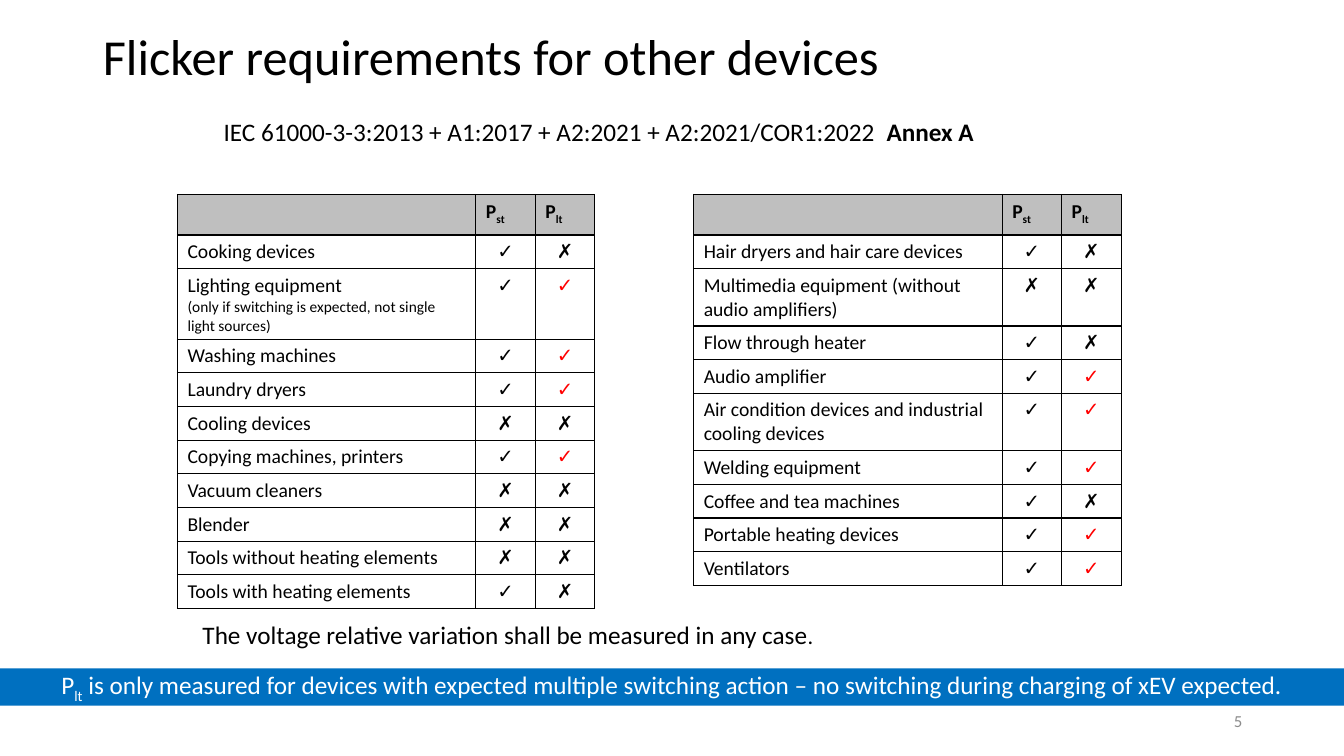
"""Build the slide on flicker requirements for other devices."""
from dataclasses import dataclass

from lxml import etree
from pptx import Presentation
from pptx import util as u
from pptx.dml import color as c
from pptx.enum import shapes, text
from pptx.oxml import ns


@dataclass(frozen=True)
class Theme:
    font: str = "Calibri"
    black: str = "000000"
    white: str = "FFFFFF"
    red: str = "FF0000"
    blue: str = "0070C0"
    head: str = "BFBFBF"
    gray: str = "8C8C8C"
    title: int = 36
    body: int = 18
    stop: int = 16
    cell: int = 14
    page: int = 12
    note: int = 11


look = Theme()


def put(para, words, size, hue=look.black, bold=False, sub=False):
    run = para.add_run()
    run.text = words
    font = run.font
    font.name, font.size, font.bold = look.font, u.Pt(size), bold
    font.color.rgb = c.RGBColor.from_string(hue)
    if sub:
        font._element.set("baseline", "-25000")


def frame(cell, base):
    props = cell._tc.get_or_add_tcPr()
    for side in "LRTB":
        width = base if side == "B" else 1
        line = etree.SubElement(props, ns.qn(f"a:ln{side}"), w=str(u.Pt(width)))
        fill = etree.SubElement(line, ns.qn("a:solidFill"))
        etree.SubElement(fill, ns.qn("a:srgbClr"), val=look.black)


deck = Presentation()
deck.slide_width, deck.slide_height = u.Inches(13.33), u.Inches(7.5)
slide = deck.slides.add_slide(deck.slide_layouts[5])

title = slide.shapes.title
title.left, title.top = u.Inches(0.92), u.Inches(0.24)
title.width, title.height = u.Inches(11.5), u.Inches(0.7)
title.text_frame.vertical_anchor = text.MSO_ANCHOR.MIDDLE
para = title.text_frame.paragraphs[0]
para.alignment = text.PP_ALIGN.LEFT
para.line_spacing = 0.9
put(para, "Flicker requirements for other devices", look.title)

band = slide.shapes.add_shape(
    shapes.MSO_SHAPE.RECTANGLE, 0, u.Inches(6.63), deck.slide_width, u.Inches(0.37))
band.shadow.inherit = False
band.fill.solid()
band.fill.fore_color.rgb = c.RGBColor.from_string(look.blue)
band.line.fill.background()
band.text_frame.vertical_anchor = text.MSO_ANCHOR.MIDDLE
para = band.text_frame.paragraphs[0]
para.alignment = text.PP_ALIGN.CENTER
put(para, "P", look.body, look.white)
put(para, "lt", look.body, look.white, sub=True)
put(para, " is only measured for devices with expected multiple switching action "
    "– no switching during charging of xEV expected.", look.body, look.white)

left, right = text.PP_ALIGN.LEFT, text.PP_ALIGN.RIGHT
labels = [
    (2.12, 1.1, 7.9, left, [
        ("IEC 61000-3-3:2013 + A1:2017 + A2:2021 + A2:2021/COR1:2022  ",
         look.body, look.black, False),
        ("Annex A", look.body, look.black, True)]),
    (1.91, 6.09, 10.19, left, [
        ("The voltage relative variation shall be measured in any case",
         look.body, look.black, False),
        (".", look.stop, look.black, False)]),
    (9.42, 6.95, 3, right, [("5", look.page, look.gray, False)]),
]
for x, y, width, align, runs in labels:
    box = slide.shapes.add_textbox(
        u.Inches(x), u.Inches(y), u.Inches(width), u.Inches(0.4))
    box.text_frame.word_wrap = True
    box.text_frame.vertical_anchor = text.MSO_ANCHOR.MIDDLE
    para = box.text_frame.paragraphs[0]
    para.alignment = align
    for words, size, hue, bold in runs:
        put(para, words, size, hue, bold)

tables = [
    (1.76, 2.96, [
        ("Cooking devices", "✓✗", 0.33),
        ("Lighting equipment\n(only if switching is expected, not single light sources)",
         "✓✓", 0.7),
        ("Washing machines", "✓✓", 0.33),
        ("Laundry dryers", "✓✓", 0.33),
        ("Cooling devices", "✗✗", 0.33),
        ("Copying machines, printers", "✓✓", 0.33),
        ("Vacuum cleaners", "✗✗", 0.33),
        ("Blender", "✗✗", 0.33),
        ("Tools without heating elements", "✗✗", 0.33),
        ("Tools with heating elements", "✓✗", 0.33)]),
    (6.88, 3.06, [
        ("Hair dryers and hair care devices", "✓✗", 0.33),
        ("Multimedia equipment (without audio amplifiers)", "✗✗", 0.57),
        ("Flow through heater", "✓✗", 0.33),
        ("Audio amplifier", "✓✓", 0.33),
        ("Air condition devices and industrial cooling devices", "✓✓", 0.57),
        ("Welding equipment", "✓✓", 0.33),
        ("Coffee and tea machines", "✓✗", 0.33),
        ("Portable heating devices", "✓✓", 0.33),
        ("Ventilators", "✓✓", 0.33)]),
]
for x, first, items in tables:
    widths = [first, 0.59, 0.59]
    highs = [0.37] + [item[2] for item in items]
    grid = slide.shapes.add_table(
        len(highs), 3, u.Inches(x), u.Inches(1.93),
        u.Inches(sum(widths)), u.Inches(sum(highs))).table
    grid.first_row = grid.horz_banding = False
    for col, width in zip(grid.columns, widths):
        col.width = u.Inches(width)
    for row, high in zip(grid.rows, highs):
        row.height = u.Inches(high)
        for cell in row.cells:
            frame(cell, 2 if row is grid.rows[0] or high == highs[0] else 1)
            cell.fill.background()

    for cell in grid.rows[0].cells:
        cell.fill.solid()
        cell.fill.fore_color.rgb = c.RGBColor.from_string(look.head)
    for col, sub in enumerate(("st", "lt"), 1):
        para = grid.cell(0, col).text_frame.paragraphs[0]
        put(para, "P", look.cell, bold=True)
        put(para, sub, look.cell, bold=True, sub=True)

    for row, (name, marks, high) in enumerate(items, 1):
        body = grid.cell(row, 0).text_frame
        label, *notes = name.split("\n")
        put(body.paragraphs[0], label, look.cell)
        for note in notes:
            put(body.add_paragraph(), note, look.note)
        for col, mark in enumerate(marks, 1):
            para = grid.cell(row, col).text_frame.paragraphs[0]
            para.alignment = text.PP_ALIGN.CENTER
            hue = look.red if col == 2 and mark == "✓" else look.black
            put(para, mark, look.cell, hue)

deck.save("out.pptx")
